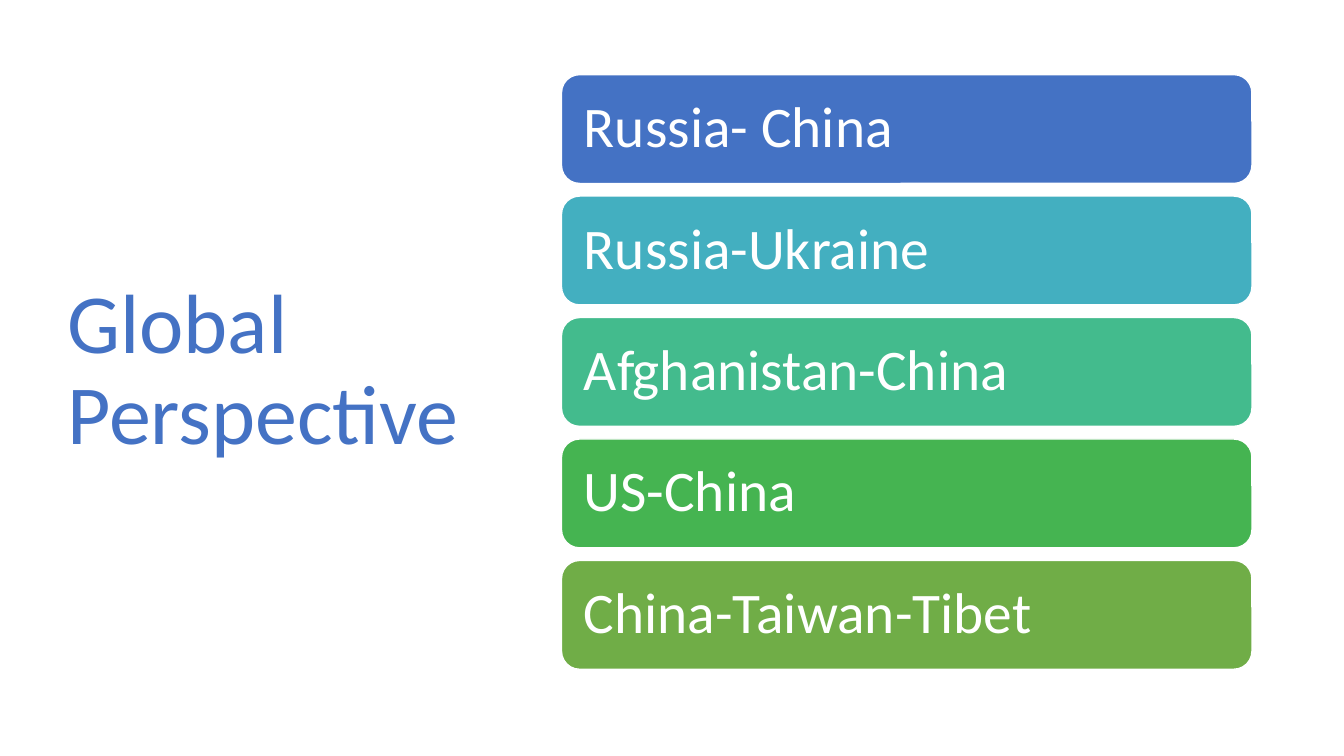
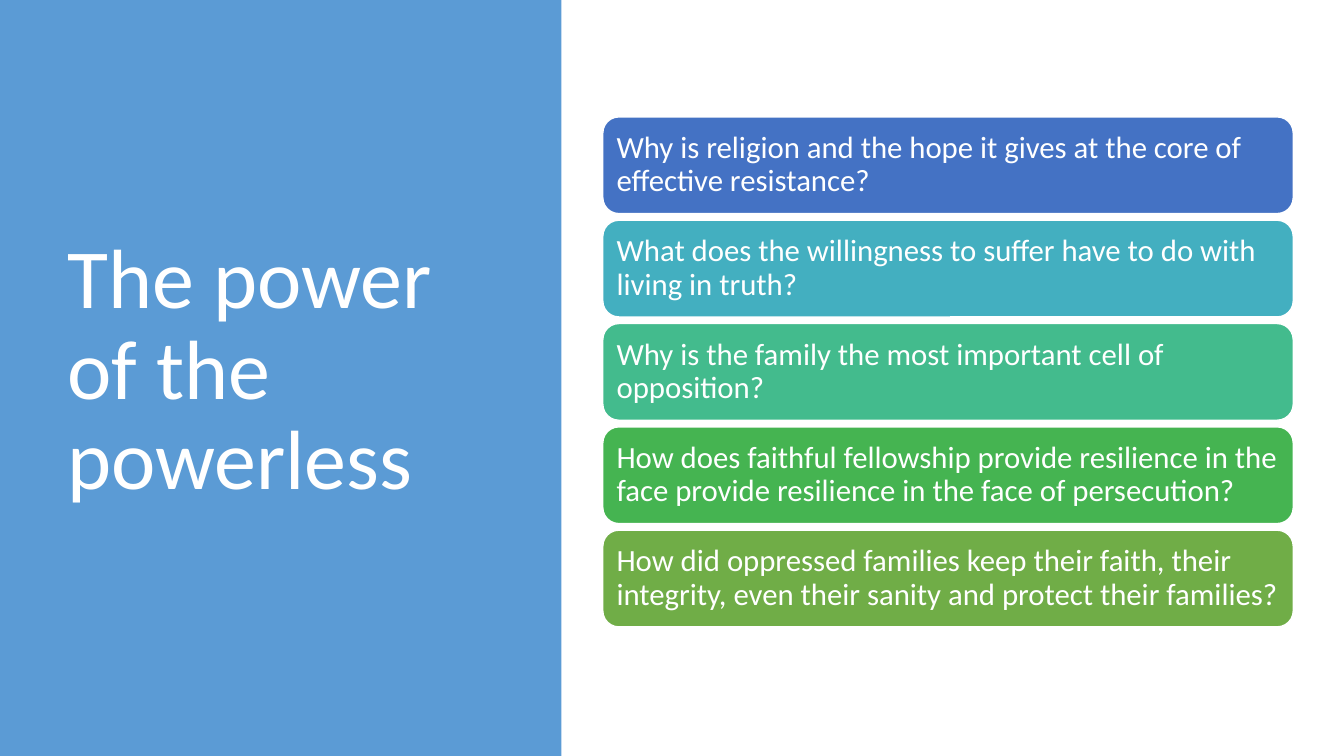
"""Build two slides that pair a large title with a stack of coloured cards."""
from dataclasses import dataclass

from pptx import Presentation
from pptx.dml.color import RGBColor
from pptx.enum.shapes import MSO_AUTO_SHAPE_TYPE as ShapeType
from pptx.enum.text import MSO_ANCHOR as Anchor, PP_ALIGN as Align
from pptx.util import Inches, Pt


@dataclass(frozen=True)
class Theme:
    """Colours, type sizes and grid shared by the slides."""
    font: str = "Calibri"
    white: str = "FFFFFF"
    title: str = "4472C4"
    panel: str = "5B9BD5"
    cards: tuple = ("4472C4", "43AFC0", "43BB8D", "45B451", "70AD47")
    title_size: int = 60
    large_size: int = 41
    small_size: int = 22
    line_spacing: float = 0.9
    cell: float = 0.1
    columns: float = 133.33
    rows: float = 75
    panel_columns: float = 55.7
    card_columns: float = 68.5


THEME = Theme()


def grid(cells):
    """Convert grid cells to a slide length."""
    return Inches(cells * THEME.cell)


def write_text(shape, text, size, color, margin=1):
    """Write one left-aligned, vertically centred paragraph in a shape."""
    frame = shape.text_frame
    frame.word_wrap = True
    frame.vertical_anchor = Anchor.MIDDLE
    frame.margin_left = frame.margin_right = grid(margin)
    frame.margin_top = frame.margin_bottom = grid(margin / 2)
    paragraph = frame.paragraphs[0]
    paragraph.text = text
    paragraph.alignment = Align.LEFT
    paragraph.line_spacing = THEME.line_spacing
    paragraph.font.name = THEME.font
    paragraph.font.size = Pt(size)
    paragraph.font.color.rgb = RGBColor.from_string(color)


def add_block(slide, kind, left, top, width, height, color):
    """Add a flat filled shape without an outline."""
    shape = slide.shapes.add_shape(kind, *map(grid, (left, top, width, height)))
    shape.shadow.inherit = False
    shape.fill.solid()
    shape.fill.fore_color.rgb = RGBColor.from_string(color)
    shape.line.fill.background()
    return shape


def add_title(slide, text, color):
    """Add the large title in the left part of the slide."""
    box = slide.shapes.add_textbox(*map(grid, (5.7, 6.8, 41.6, 60.2)))
    write_text(box, text, THEME.title_size, color)


def add_cards(slide, texts, left, top, bottom, height, size, margin):
    """Spread rounded cards evenly between two rows of the grid."""
    pitch = (bottom - top - height) / (len(texts) - 1)
    for index, (text, color) in enumerate(zip(texts, THEME.cards)):
        card = add_block(slide, ShapeType.ROUNDED_RECTANGLE, left,
                         top + index * pitch, THEME.card_columns, height, color)
        card.line.color.rgb = RGBColor.from_string(THEME.white)
        card.line.width = Pt(1)
        write_text(card, text, size, THEME.white, margin)


def add_perspective_slide(slide):
    """Fill the slide on international relations."""
    add_title(slide, "Global Perspective", THEME.title)
    relations = ("Russia- China", "Russia-Ukraine", "Afghanistan-China",
                 "US-China", "China-Taiwan-Tibet")
    add_cards(slide, relations, left=THEME.panel_columns, top=7.4, bottom=66.4,
              height=10.8, size=THEME.large_size, margin=1.7)


def add_powerless_slide(slide):
    """Fill the slide of questions beside a coloured panel."""
    add_block(slide, ShapeType.RECTANGLE, 0, 0, THEME.panel_columns, THEME.rows,
              THEME.panel)
    add_title(slide, "The power of the powerless", THEME.white)
    questions = (
        "Why is religion and the hope it gives at the core of effective resistance?",
        "What does the willingness to suffer have to do with living in truth?",
        "Why is the family the most important cell of opposition?",
        "How does faithful fellowship provide resilience in the face provide "
        "resilience in the face of persecution?",
        "How did oppressed families keep their faith, their integrity, even "
        "their sanity and protect their families?",
    )
    add_cards(slide, questions, left=59.8, top=11.6, bottom=62.2, height=9.6,
              size=THEME.small_size, margin=0.9)


def main():
    """Build and save the presentation."""
    presentation = Presentation()
    presentation.slide_width = grid(THEME.columns)
    presentation.slide_height = grid(THEME.rows)
    blank = presentation.slide_layouts[6]
    for fill_slide in (add_perspective_slide, add_powerless_slide):
        fill_slide(presentation.slides.add_slide(blank))
    presentation.save("out.pptx")


if __name__ == "__main__":
    main()
